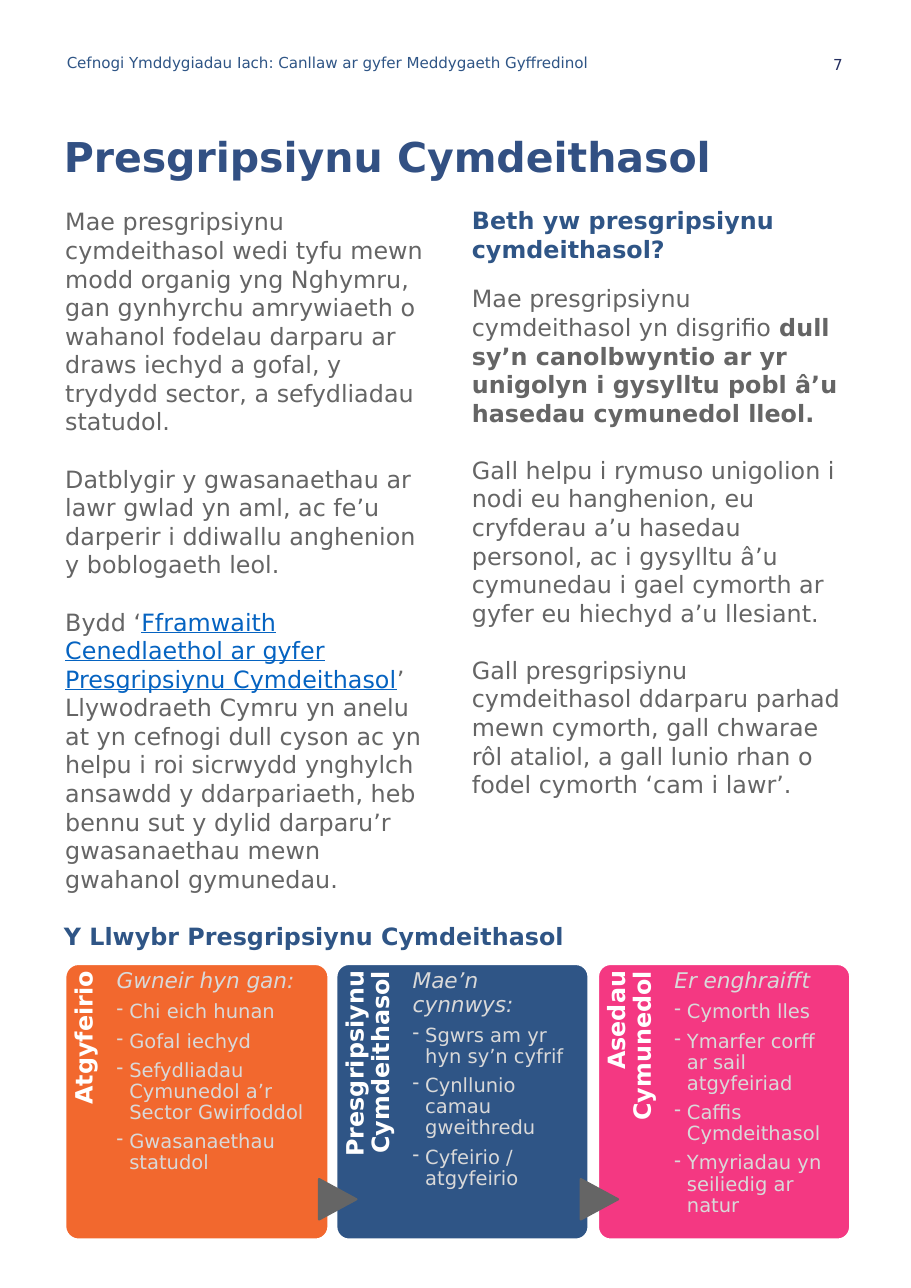
"""Build the social prescribing page of the Welsh general practice guide."""
from lxml import etree
from pptx import Presentation
from pptx.dml.color import RGBColor
from pptx.enum import shapes, text
from pptx.oxml.ns import qn
from pptx.util import Pt

NAVY, GREY, PALE, WHITE = "2F5586", "656565", "D9D9D9", "FFFFFF"


def style(font, size, colour, bold=False, italic=False):
    font.name, font.size = "DejaVu Sans", Pt(size)
    font.bold, font.italic = bold, italic
    font.color.rgb = RGBColor.from_string(colour)


def set_frame(shape, left, top, width, height, inset_top=0.0, inset_right=0.0):
    shape.left, shape.top = Pt(left), Pt(top)
    shape.width, shape.height = Pt(width), Pt(height)
    frame = shape.text_frame
    frame.word_wrap = True
    frame.auto_size = text.MSO_AUTO_SIZE.NONE
    frame.margin_left = frame.margin_bottom = 0
    frame.margin_top, frame.margin_right = Pt(inset_top), Pt(inset_right)
    return frame


presentation = Presentation()
presentation.slide_width, presentation.slide_height = Pt(421.2), Pt(595.44)
slide = presentation.slides.add_slide(presentation.slide_layouts[5])

frame = set_frame(slide.shapes.title, 29.5, 59.8, 352, 23.8, 1)
frame.vertical_anchor = text.MSO_ANCHOR.BOTTOM
title = frame.paragraphs[0]
title.text = "Presgripsiynu Cymdeithasol"
title.alignment = text.PP_ALIGN.LEFT
style(title.font, 19, "325083", bold=True)

labels = [
    ("Cefnogi Ymddygiadau Iach: Canllaw ar gyfer Meddygaeth Gyffredinol",
     (30.9, 23.8, 260, 9.4, 1), 7, NAVY, False, text.PP_ALIGN.LEFT),
    ("7", (301.7, 25.6, 95, 10, 0, 7.2), 7, "242F60", False, text.PP_ALIGN.RIGHT),
    ("Y Llwybr Presgripsiynu Cymdeithasol",
     (29.5, 419.8, 248.4, 20.2, 6.5), 11, NAVY, True, text.PP_ALIGN.LEFT),
]
for wording, box, size, colour, bold, alignment in labels:
    frame = set_frame(slide.shapes.add_textbox(0, 0, 0, 0), *box)
    paragraph = frame.paragraphs[0]
    paragraph.text = wording
    paragraph.alignment = alignment
    style(paragraph.font, size, colour, bold)

columns = [
    ((30.2, 89.3, 170.6, 339.8, 6.5), [
        (0, [("Mae presgripsiynu cymdeithasol wedi tyfu mewn modd organig yng Nghymru, gan "
              "gynhyrchu amrywiaeth o wahanol fodelau darparu ar draws iechyd a gofal, y "
              "trydydd sector, a sefydliadau statudol.", "plain")]),
        (13.2, [("Datblygir y gwasanaethau ar lawr gwlad yn aml, ac fe’u darperir i ddiwallu "
                 "anghenion y boblogaeth leol.", "plain")]),
        (13.2, [("Bydd ‘", "plain"),
                ("Fframwaith Cenedlaethol ar gyfer Presgripsiynu Cymdeithasol", "link"),
                ("’ Llywodraeth Cymru yn anelu at yn cefnogi dull cyson ac yn helpu i roi "
                 "sicrwydd ynghylch ansawdd y ddarpariaeth, heb bennu sut y dylid darparu’r "
                 "gwasanaethau mewn gwahanol gymunedau.", "plain")]),
    ]),
    ((218.2, 88.6, 175, 296.6, 6.5), [
        (0, [("Beth yw presgripsiynu cymdeithasol?", "heading")]),
        (9.8, [("Mae presgripsiynu cymdeithasol yn disgrifio ", "plain"),
               ("dull sy’n canolbwyntio ar yr unigolyn i gysylltu pobl â’u hasedau "
                "cymunedol lleol.", "strong")]),
        (13.2, [("Gall helpu i rymuso unigolion i nodi eu hanghenion, eu cryfderau a’u "
                 "hasedau personol, ac i gysylltu â’u cymunedau i gael cymorth ar gyfer eu "
                 "hiechyd a’u llesiant.", "plain")]),
        (13.2, [("Gall presgripsiynu cymdeithasol ddarparu parhad mewn cymorth, gall chwarae "
                 "rôl ataliol, a gall lunio rhan o fodel cymorth ‘cam i lawr’.", "plain")]),
    ]),
]
run_colours = {"plain": GREY, "strong": GREY, "heading": NAVY, "link": "0563C1"}
for box, paragraphs in columns:
    frame = set_frame(slide.shapes.add_textbox(0, 0, 0, 0), *box)
    for index, (gap, runs) in enumerate(paragraphs):
        paragraph = frame.add_paragraph() if index else frame.paragraphs[0]
        paragraph.space_before = Pt(gap)
        for wording, kind in runs:
            run = paragraph.add_run()
            run.text = wording
            style(run.font, 11, run_colours[kind], kind in ("strong", "heading"))
            run.font.underline = kind == "link"

PANEL_TOP, PANEL_HEIGHT = 445.7, 127.4
panels = [
    (30.2, 121.7, "F2682E", "Atgyfeirio", 54, 90.7, "Gwneir hyn gan:",
     ["Chi eich hunan", "Gofal iechyd", "Sefydliadau\vCymunedol a’r\vSector Gwirfoddol",
      "Gwasanaethau\vstatudol"]),
    (155.5, 116.6, NAVY, "Presgripsiynu Cymdeithasol", 190.8, 75.6, "Mae’n cynnwys:",
     ["Sgwrs am yr\vhyn sy’n cyfrif", "Cynllunio\vcamau\vgweithredu", "Cyfeirio /\vatgyfeirio"]),
    (276.5, 116.6, "F43882", "Asedau Cymunedol", 311.8, 75.6, "Er enghraifft",
     ["Cymorth lles", "Ymarfer corff\var sail\vatgyfeiriad", "Caffis\vCymdeithasol",
      "Ymyriadau yn\vseiliedig ar\vnatur"]),
]
for number, (left, width, colour, name, list_left, list_width, lead, items) in enumerate(panels):
    outlines = [(shapes.MSO_SHAPE.ROUNDED_RECTANGLE,
                 (left, PANEL_TOP, width, PANEL_HEIGHT), colour, WHITE, 0)]
    if number:
        outlines.append((shapes.MSO_SHAPE.FLOWCHART_EXTRACT,
                         (left - 8.7, 545.8, 18.7, 17.3), GREY, GREY, 90))
    for preset, box, fill, line, rotation in outlines:
        shape = slide.shapes.add_shape(preset, *map(Pt, box))
        shape.shadow.inherit = False
        shape.rotation = rotation
        shape.fill.solid()
        shape.fill.fore_color.rgb = RGBColor.from_string(fill)
        shape.line.color.rgb = RGBColor.from_string(line)
        shape.line.width = Pt(1)
        if preset == shapes.MSO_SHAPE.ROUNDED_RECTANGLE:
            shape.adjustments[0] = 0.05

    name_box = slide.shapes.add_textbox(0, 0, 0, 0)
    name_box.rotation = 270
    frame = set_frame(name_box, left - 40.3, 485.7, 104.4, 23.5, 2.9, 3.6)
    paragraph = frame.paragraphs[0]
    paragraph.text = name
    paragraph.alignment = text.PP_ALIGN.RIGHT
    paragraph.line_spacing = 0.9
    style(paragraph.font, 11, WHITE, bold=True)

    frame = set_frame(slide.shapes.add_textbox(0, 0, 0, 0),
                      list_left, PANEL_TOP, list_width, PANEL_HEIGHT, 2.9)
    for index, wording in enumerate([lead] + items):
        paragraph = frame.add_paragraph() if index else frame.paragraphs[0]
        paragraph.text = wording
        paragraph.line_spacing = 0.9
        paragraph.space_after = Pt(3.8)
        if index:
            properties = paragraph._p.get_or_add_pPr()
            properties.set("marL", str(Pt(5.8)))
            properties.set("indent", str(-Pt(5.8)))
            etree.SubElement(properties, qn("a:buChar")).set("char", "-")
        style(paragraph.font, 9 if index else 10, PALE, italic=not index)

presentation.save("out.pptx")
